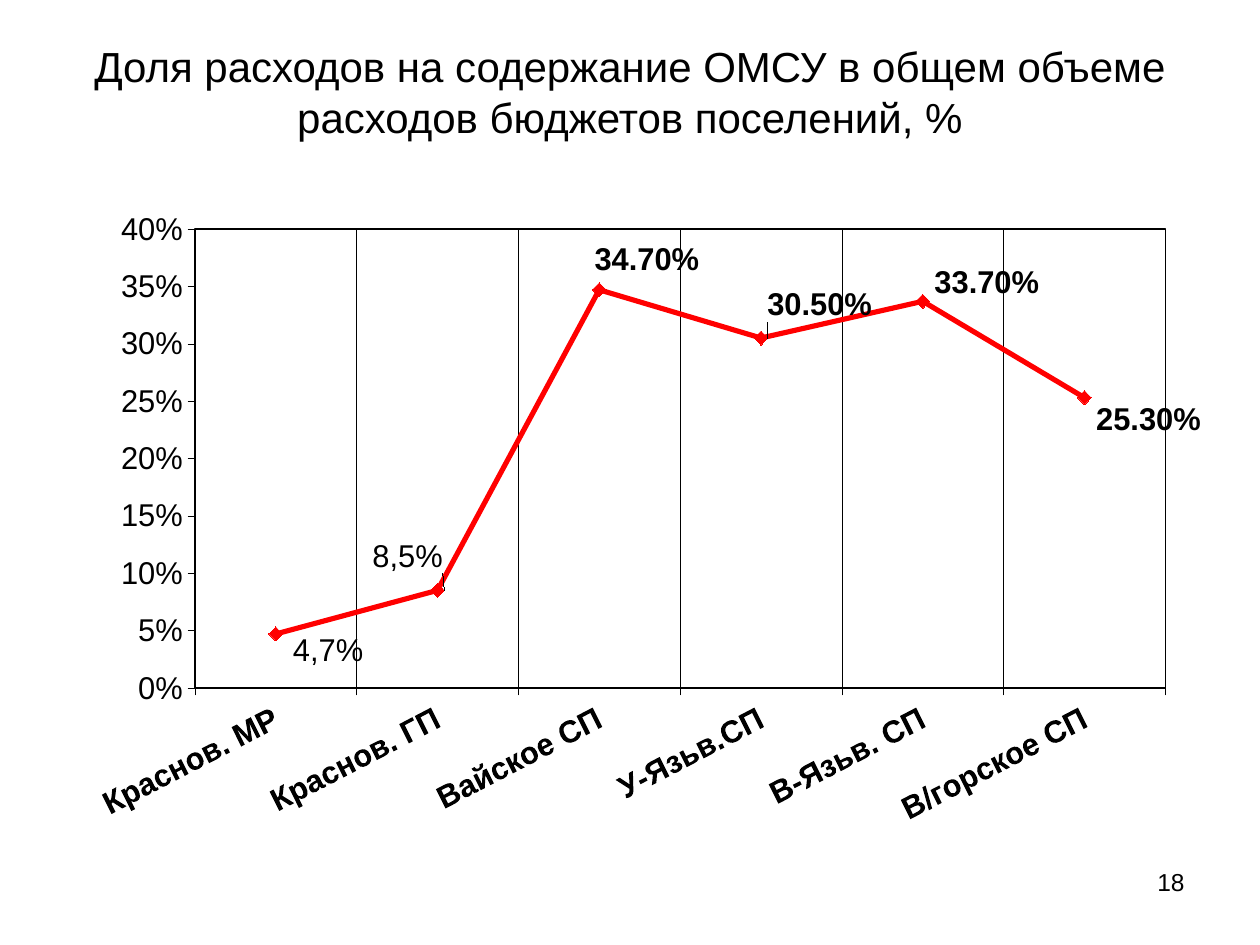
from dataclasses import dataclass

from lxml import etree
from pptx import Presentation
from pptx.chart.data import CategoryChartData
from pptx.dml.color import RGBColor
from pptx.enum.chart import XL_CHART_TYPE, XL_LABEL_POSITION, XL_MARKER_STYLE, XL_TICK_MARK
from pptx.enum.text import MSO_ANCHOR, PP_ALIGN
from pptx.oxml import parse_xml
from pptx.oxml.ns import nsdecls, qn
from pptx.util import Cm, Pt

LINE_MARKERS = XL_CHART_TYPE.LINE_MARKERS
LABEL_RIGHT = XL_LABEL_POSITION.RIGHT
DIAMOND = XL_MARKER_STYLE.DIAMOND
TICK_OUT, TICK_NONE = XL_TICK_MARK.OUTSIDE, XL_TICK_MARK.NONE
TOP, MIDDLE = MSO_ANCHOR.TOP, MSO_ANCHOR.MIDDLE
CENTER, RIGHT = PP_ALIGN.CENTER, PP_ALIGN.RIGHT


@dataclass(frozen=True)
class Theme:
    font: str = "Arial"
    ink: RGBColor = RGBColor(0, 0, 0)
    accent: RGBColor = RGBColor(255, 0, 0)
    title: Pt = Pt(24)
    chart: Pt = Pt(18)
    page_number: Pt = Pt(14)
    hairline: Pt = Pt(0.25)
    series_line: Pt = Pt(3)


THEME = Theme()
TITLE = "Доля расходов на содержание ОМСУ в общем объеме расходов бюджетов поселений, %"

# Settlement, share, label shift as fractions of the chart, own label wording
SHARES = [
    ("Краснов. МР", 0.047, (0.005, 0.023), "4,7%"),
    ("Краснов. ГП", 0.085, (-0.07, -0.05), "8,5%"),
    ("Вайское СП", 0.347, (-0.015, -0.044), None),
    ("У-Язьв.СП", 0.305, (-0.005, -0.049), None),
    ("В-Язьв. СП", 0.337, (0, -0.028), None),
    ("В/горское СП", 0.253, (0, 0.032), None),
]


def style_font(font, size, bold=False):
    font.name = THEME.font
    font.size = size
    font.bold = bold
    font.color.rgb = THEME.ink


def style_line(line, color, width):
    line.color.rgb = color
    line.width = width


def add_text(page, text, bounds, size, align, anchor):
    frame = page.shapes.add_textbox(*bounds).text_frame
    frame.word_wrap = True
    frame.vertical_anchor = anchor
    para = frame.paragraphs[0]
    para.text = text
    para.alignment = align
    style_font(para.font, size)


def manual_layout(**values):
    layout = parse_xml(f"<c:layout {nsdecls('c')}><c:manualLayout/></c:layout>")
    for name, value in values.items():
        etree.SubElement(layout[0], qn(f"c:{name}")).set("val", str(value))
    return layout


def style_plot_area(chart):
    """Fix the inner plot rectangle and frame it."""
    area = chart._chartSpace.chart.plotArea
    for old in area.findall(qn("c:layout")):
        area.remove(old)
    area.insert(0, manual_layout(
        layoutTarget="inner", xMode="edge", yMode="edge",
        x=0.104, y=0.064, w=0.885, h=0.667))
    area.append(parse_xml(
        f"<c:spPr {nsdecls('c', 'a')}><a:noFill/><a:ln w='{Pt(0.75)}'>"
        f"<a:solidFill><a:srgbClr val='{THEME.ink}'/></a:solidFill></a:ln></c:spPr>"))


def style_axis(axis, bold):
    axis.major_tick_mark = TICK_OUT
    axis.minor_tick_mark = TICK_NONE
    style_line(axis.format.line, THEME.ink, THEME.hairline)
    style_font(axis.tick_labels.font, THEME.chart, bold)


def style_axes(chart):
    categories, values = chart.category_axis, chart.value_axis
    style_axis(categories, bold=True)
    style_axis(values, bold=False)
    categories.has_major_gridlines = True
    style_line(categories.major_gridlines.format.line, THEME.ink, THEME.hairline)
    degrees = -27
    body = categories._element.find(qn("c:txPr")).find(qn("a:bodyPr"))
    body.set("rot", str(degrees * 60000))
    body.set("vert", "horz")
    values.has_major_gridlines = False
    values.minimum_scale, values.maximum_scale, values.major_unit = 0, 0.4, 0.05
    values.tick_labels.number_format = "0%"
    values.tick_labels.number_format_is_linked = False


def style_series(series):
    series.smooth = False
    style_line(series.format.line, THEME.accent, THEME.series_line)
    marker = series.marker
    marker.style, marker.size = DIAMOND, 8
    marker.format.fill.solid()
    marker.format.fill.fore_color.rgb = THEME.accent
    marker.format.line.color.rgb = THEME.accent


def label_point(series, index, shift, wording):
    """Label one point, moved by shift from its place right of the marker."""
    label = series.points[index].data_label
    if wording:
        para = label.text_frame.paragraphs[0]
        span = para.add_run()
        span.text = wording
        style_font(span.font, THEME.chart)
    else:
        style_font(label.font, THEME.chart, bold=True)
    label.position = LABEL_RIGHT
    element = series._element.find(qn("c:dLbls")).findall(qn("c:dLbl"))[index]
    element.insert(1, manual_layout(x=shift[0], y=shift[1]))
    if not wording:
        element.insert(2, parse_xml(
            f"<c:numFmt {nsdecls('c')} formatCode='0.00%' sourceLinked='0'/>"))


def add_share_chart(page, bounds):
    data = CategoryChartData(number_format="0.00%")
    data.categories = [name for name, *_ in SHARES]
    data.add_series("Series 1", [share for _, share, *_ in SHARES])
    chart = page.shapes.add_chart(LINE_MARKERS, *bounds, data).chart
    chart.has_title = False
    chart.has_legend = False
    style_font(chart.font, THEME.chart, bold=True)
    chart.plots[0].vary_by_categories = False
    style_plot_area(chart)
    style_axes(chart)
    series = chart.plots[0].series[0]
    style_series(series)
    labels = series.data_labels
    labels.show_value = True
    labels.number_format = "0.00%"
    labels.number_format_is_linked = False
    style_font(labels.font, THEME.chart, bold=True)
    for index, (_, _, shift, wording) in enumerate(SHARES):
        label_point(series, index, shift, wording)


def main():
    deck = Presentation()
    deck.slide_width, deck.slide_height = Cm(25.4), Cm(19.05)
    page = deck.slides.add_slide(deck.slide_layouts[6])
    add_text(page, "18", (Cm(18.2), Cm(17.35), Cm(5.93), Cm(1.32)),
             THEME.page_number, RIGHT, TOP)
    add_text(page, TITLE, (Cm(1.27), Cm(0.76), Cm(22.86), Cm(2.16)),
             THEME.title, CENTER, MIDDLE)
    add_share_chart(page, (Cm(1.63), Cm(3.73), Cm(22.58), Cm(13.87)))
    deck.save("out.pptx")


if __name__ == "__main__":
    main()
